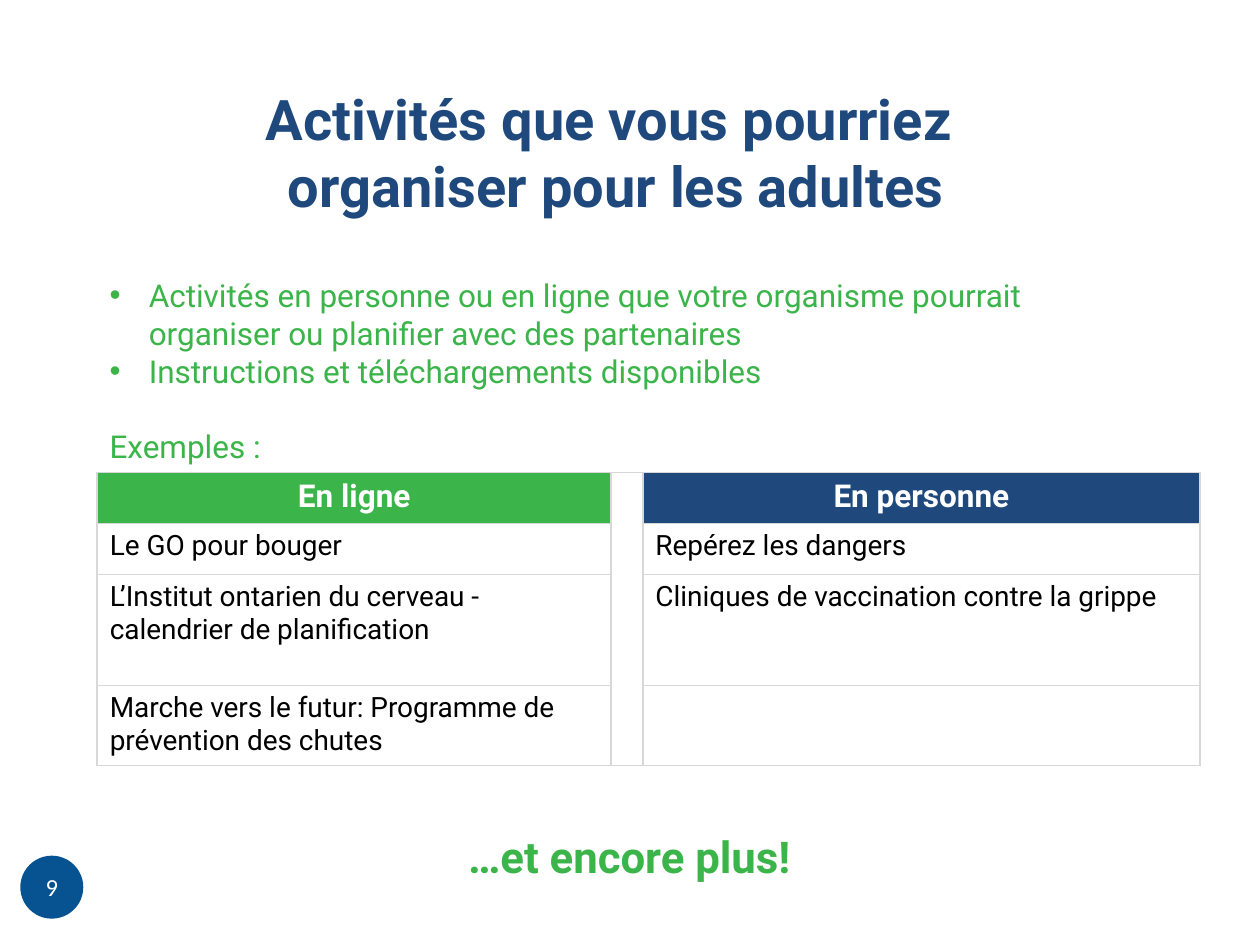
import pptx
import pptx.util
import pptx.dml.color
import pptx.enum.shapes
import pptx.enum.text
from lxml import etree
from pptx.oxml.ns import qn

Cm, Pt = pptx.util.Cm, pptx.util.Pt
ALIGN = pptx.enum.text.PP_ALIGN
ANCHOR = pptx.enum.text.MSO_ANCHOR
COLORS = {"green": "3BB44A", "navy": "1F497D", "blue": "075290",
          "white": "FFFFFF", "black": "000000", "border": "D8D8D8"}


def rgb(name):
    return pptx.dml.color.RGBColor.from_string(COLORS[name])


class SlideBuilder:
    font = "Roboto"

    def __init__(self, prs):
        self.s = prs.slides.add_slide(prs.slide_layouts[5])

    def style(self, p, size, color, bold=False, align=ALIGN.LEFT, font=None):
        p.alignment = align
        p.font.name = font or self.font
        p.font.size = Pt(size)
        p.font.bold = bold
        p.font.color.rgb = rgb(color)

    def fill_text(self, tf, lines, size, color, **kw):
        tf.word_wrap = True
        for i, line in enumerate(lines):
            p = tf.paragraphs[0] if i == 0 else tf.add_paragraph()
            p.text = line
            self.style(p, size, color, **kw)

    def title(self, lines, box):
        sp = self.s.shapes.title
        sp.left, sp.top, sp.width, sp.height = (Cm(v) for v in box)
        tf = sp.text_frame
        tf.auto_size = pptx.enum.text.MSO_AUTO_SIZE.NONE
        tf.vertical_anchor = ANCHOR.MIDDLE
        self.fill_text(tf, lines, 32, "navy", bold=True, align=ALIGN.CENTER)

    def text(self, lines, box, size, color, **kw):
        sp = self.s.shapes.add_textbox(*(Cm(v) for v in box))
        self.fill_text(sp.text_frame, lines, size, color, **kw)
        return sp.text_frame

    def bullet(self, p, color):
        pPr = p._p.get_or_add_pPr()
        pPr.set("marL", str(Cm(0.79)))
        pPr.set("indent", str(-Cm(0.79)))
        bu_clr = etree.Element(qn("a:buClr"))
        etree.SubElement(bu_clr, qn("a:srgbClr"), val=COLORS[color])
        bu_font = etree.Element(qn("a:buFont"), typeface="Arial")
        bu_char = etree.Element(qn("a:buChar"), char="•")
        pPr.extend([bu_clr, bu_font, bu_char])

    def badge(self, label, box):
        sp = self.s.shapes.add_shape(pptx.enum.shapes.MSO_SHAPE.OVAL,
                                     *(Cm(v) for v in box))
        sp.shadow.inherit = False
        sp.fill.solid()
        sp.fill.fore_color.rgb = rgb("blue")
        sp.line.fill.background()
        tf = sp.text_frame
        tf.margin_left = tf.margin_right = tf.margin_top = tf.margin_bottom = 0
        tf.vertical_anchor = ANCHOR.MIDDLE
        self.fill_text(tf, [label], 14, "white", align=ALIGN.CENTER, font="Calibri")

    def borders(self, cell):
        tcPr = cell._tc.get_or_add_tcPr()
        for i, side in enumerate(("a:lnL", "a:lnR", "a:lnT", "a:lnB")):
            ln = etree.Element(qn(side), w=str(Pt(1)))
            solid = etree.SubElement(ln, qn("a:solidFill"))
            etree.SubElement(solid, qn("a:srgbClr"), val=COLORS["border"])
            tcPr.insert(i, ln)

    def table(self, rows, left, top, widths, heights, head_fills):
        frame = self.s.shapes.add_table(len(rows), len(widths), Cm(left), Cm(top),
                                        Cm(sum(widths)), Cm(sum(heights)))
        tbl = frame.table
        tbl.first_row = tbl.horz_banding = False
        for col, width in zip(tbl.columns, widths):
            col.width = Cm(width)
        for row, height in zip(tbl.rows, heights):
            row.height = Cm(height)
        for r, texts in enumerate(rows):
            for c, text in enumerate(texts):
                cell = tbl.cell(r, c)
                cell.fill.solid()
                cell.fill.fore_color.rgb = rgb(head_fills[c] if r == 0 else "white")
                self.borders(cell)
                p = cell.text_frame.paragraphs[0]
                p.text = text
                if r == 0:
                    self.style(p, 18, "white", bold=True, align=ALIGN.CENTER)
                else:
                    self.style(p, 16, "black")
        return tbl


def main():
    prs = pptx.Presentation()
    prs.slide_width, prs.slide_height = Cm(25.4), Cm(19.05)
    b = SlideBuilder(prs)

    # Page number
    b.badge("9", (0.41, 17.25, 1.27, 1.27))

    # Title
    b.title(["Activités que vous pourriez ", "organiser pour les adultes"],
            (1.96, 1.47, 20.93, 3.18))

    # Introduction
    tf = b.text(["Activités en personne ou en ligne que votre organisme pourrait "
                 "organiser ou planifier avec des partenaires",
                 "Instructions et téléchargements disponibles",
                 "Exemples\u00a0:"],
                (1.96, 5.44, 20.42, 4.17), 18, "green")
    for p in tf.paragraphs[:2]:
        b.bullet(p, "green")
    tf.paragraphs[2].space_before = Pt(21.5)

    # Examples, with one merged gap column between the two lists
    rows = [("En ligne", "", "En personne"),
            ("Le GO pour bouger", "", "Repérez les dangers"),
            ("L’Institut ontarien du cerveau - calendrier de planification", "",
             "Cliniques de vaccination contre la grippe"),
            ("Marche vers le futur: Programme de prévention des chutes", "", "")]
    tbl = b.table(rows, 1.96, 9.52, (10.36, 0.64, 11.23),
                  (1.03, 1.03, 2.24, 1.55), ("green", "white", "navy"))
    tbl.cell(0, 1).merge(tbl.cell(len(rows) - 1, 1))

    # Closing line
    b.text(["…et encore plus!"], (8.71, 16.61, 7.95, 1.32), 25, "green",
           bold=True, align=ALIGN.CENTER)

    prs.save("out.pptx")


if __name__ == "__main__":
    main()
